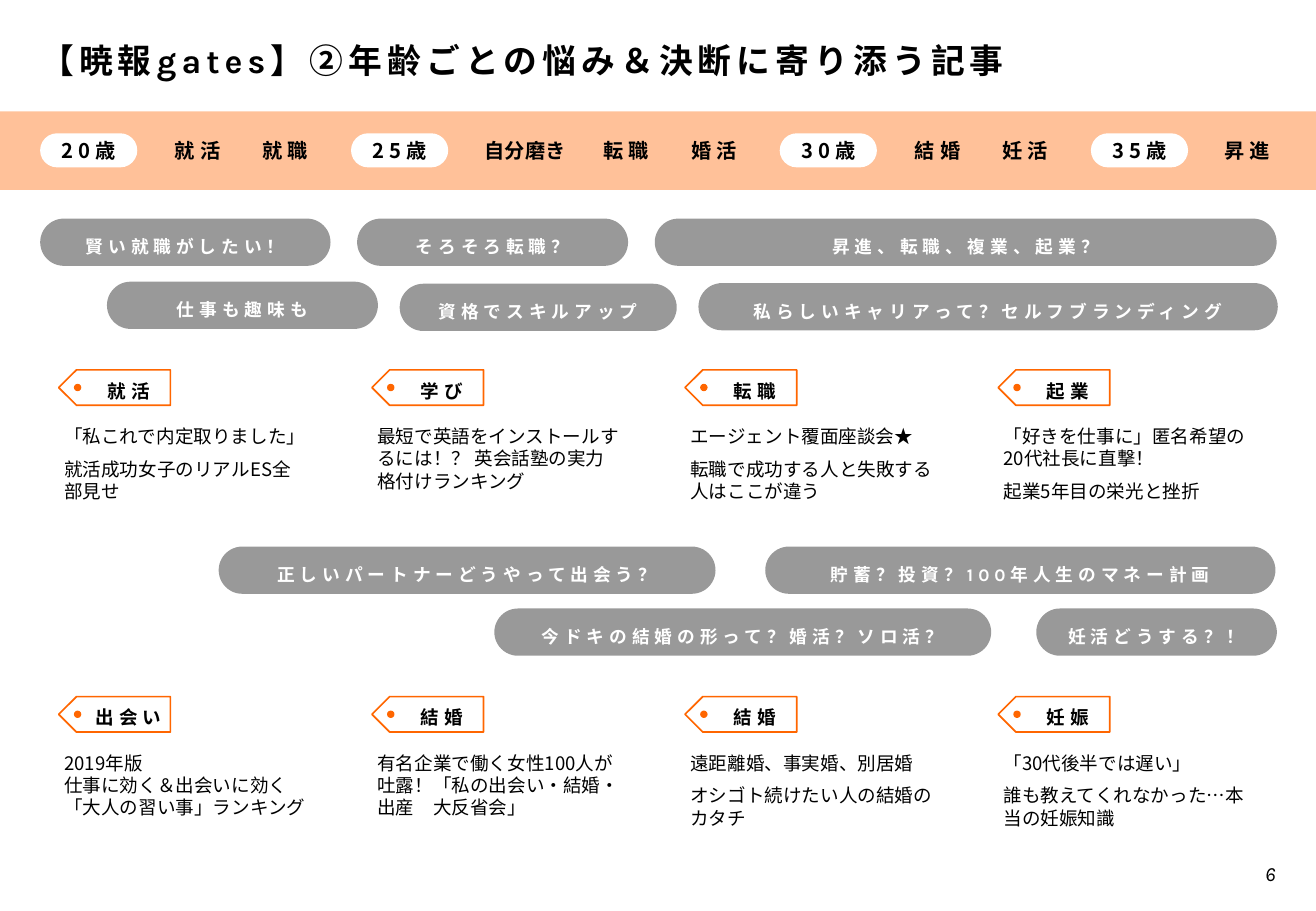
from copy import deepcopy
from dataclasses import dataclass, replace

from lxml import etree
from pptx import Presentation
from pptx.dml.color import RGBColor
from pptx.enum.shapes import MSO_SHAPE
from pptx.enum.text import MSO_ANCHOR, MSO_AUTO_SIZE, PP_ALIGN
from pptx.oxml.ns import qn
from pptx.shapes.autoshape import Shape
from pptx.slide import Slide
from pptx.util import Pt

RECTANGLE = MSO_SHAPE.RECTANGLE
ROUNDED = MSO_SHAPE.ROUNDED_RECTANGLE
PENTAGON = MSO_SHAPE.PENTAGON
OVAL = MSO_SHAPE.OVAL
TOP, MIDDLE, BOTTOM = MSO_ANCHOR.TOP, MSO_ANCHOR.MIDDLE, MSO_ANCHOR.BOTTOM
LEFT, CENTER, RIGHT = PP_ALIGN.LEFT, PP_ALIGN.CENTER, PP_ALIGN.RIGHT
FIXED, GROW = MSO_AUTO_SIZE.NONE, MSO_AUTO_SIZE.SHAPE_TO_FIT_TEXT

COLORS = {"black": "000000", "white": "FFFFFF", "orange": "FF6600"}
LATIN_FONT = "Karla"
JAPANESE_FONT = "Noto Sans CJK JP"


@dataclass(frozen=True)
class TextStyle:
    size: float
    font: str = LATIN_FONT
    color: str = "black"
    bold: bool = True
    italic: bool = False
    tracking: float = 3
    align: PP_ALIGN = LEFT
    anchor: MSO_ANCHOR = TOP
    line_spacing: float = 1
    space_after: float = 0
    margins: tuple[float, float, float, float] = (0, 0, 0, 0)
    wrap: bool = True
    auto_size: MSO_AUTO_SIZE = FIXED


@dataclass(frozen=True)
class Box:
    left: float
    top: float
    width: float
    height: float


@dataclass(frozen=True)
class Pill:
    text: str
    left: float
    top: float
    width: float


@dataclass(frozen=True)
class Card:
    tag: str
    body: tuple[str, ...]


TITLE_STYLE = TextStyle(20, anchor=MIDDLE, line_spacing=0.9)
NUMBER_STYLE = TextStyle(12, italic=True, bold=False, align=RIGHT, anchor=BOTTOM)
STAGE_STYLE = TextStyle(12, JAPANESE_FONT, wrap=False, auto_size=GROW)
AGE_STYLE = replace(STAGE_STYLE, align=CENTER, anchor=MIDDLE, margins=(8.5, 0, 8.5, 0))
PILL_STYLE = TextStyle(10.5, color="white", align=CENTER, line_spacing=1.5,
                       margins=(0, 0, 0, 2.8), auto_size=GROW)
TAG_STYLE = TextStyle(11, align=CENTER, anchor=MIDDLE, line_spacing=1.5,
                      margins=(11.3, 0, 0, 2.8))
BODY_STYLE = TextStyle(11, JAPANESE_FONT, bold=False, tracking=0, space_after=6,
                       margins=(14.2, 42.5, 14.2, 11.3))

AGES = {"20歳": 23.8, "25歳": 208.1, "30歳": 462.2, "35歳": 646.6}
STAGES = {"就活": 103.7, "就職": 155.5, "自分磨き": 287.3, "転職": 357.8, "婚活": 409.7,
          "結婚": 542.2, "妊活": 594, "昇進": 725.8}
PILLS = (
    Pill("賢い就職がしたい！", 23.8, 129.6, 172.1),
    Pill("そろそろ転職？", 211.7, 129.6, 160.6),
    Pill("昇進、転職、複業、起業？", 388.1, 129.6, 368.6),
    Pill("仕事も趣味も", 63.4, 167, 160.6),
    Pill("資格でスキルアップ", 236.9, 168.2, 164.2),
    Pill("私らしいキャリアって？セルフブランディング", 414, 167.8, 343.4),
    Pill("正しいパートナーどうやって出会う？", 129.6, 324, 294.5),
    Pill("貯蓄？投資？100年人生のマネー計画", 453.6, 324, 302.4),
    Pill("今ドキの結婚の形って？婚活？ソロ活？", 293, 360.7, 294.5),
    Pill("妊活どうする？！", 614.2, 360.7, 142.6),
)
CARD_ROWS = {
    209.5: (
        Card("就活", ("「私これで内定取りました」", "就活成功女子のリアルES全部見せ")),
        Card("学び", ("最短で英語をインストールするには！？ 英会話塾の実力格付けランキング",)),
        Card("転職", ("エージェント覆面座談会★", "転職で成功する人と失敗する人はここが違う")),
        Card("起業", ("「好きを仕事に」匿名希望の20代社長に直撃！", "起業5年目の栄光と挫折")),
    ),
    403.2: (
        Card("出会い", ("2019年版\v仕事に効く＆出会いに効く\v「大人の習い事」ランキング",)),
        Card("結婚", ("有名企業で働く女性100人が吐露！「私の出会い・結婚・出産　大反省会」",)),
        Card("結婚", ("遠距離婚、事実婚、別居婚", "オシゴト続けたい人の結婚のカタチ")),
        Card("妊娠", ("「30代後半では遅い」", "誰も教えてくれなかった…本当の妊娠知識")),
    ),
}
CARD_LEFT, CARD_PITCH = 23.8, 185.6


def color(name: str) -> RGBColor:
    return RGBColor.from_string(COLORS[name])


def write(shape: Shape, lines: tuple[str, ...], style: TextStyle) -> None:
    frame = shape.text_frame
    frame.text = lines[0]
    for line in lines[1:]:
        frame.add_paragraph().text = line
    frame.word_wrap = style.wrap
    frame.auto_size = style.auto_size
    frame.vertical_anchor = style.anchor
    (frame.margin_left, frame.margin_top,
     frame.margin_right, frame.margin_bottom) = map(Pt, style.margins)
    for paragraph in frame.paragraphs:
        paragraph.alignment = style.align
        paragraph.line_spacing = style.line_spacing
        paragraph.space_before = Pt(0)
        paragraph.space_after = Pt(style.space_after)
        for run in paragraph.runs:
            run.font.size = Pt(style.size)
            run.font.name = style.font
            run.font.bold = style.bold
            run.font.italic = style.italic
            run.font.color.rgb = color(style.color)
            properties = run._r.get_or_add_rPr()
            properties.set("spc", str(round(style.tracking * 100)))
            east_asian = etree.Element(qn("a:ea"), typeface=JAPANESE_FONT)
            properties.find(qn("a:latin")).addnext(east_asian)
        for line_break in paragraph._p.findall(qn("a:br")):
            line_break.append(deepcopy(paragraph.runs[0]._r.rPr))


def add_shape(slide: Slide, kind: MSO_SHAPE, box: Box, fill: str, opacity: int = 100) -> Shape:
    shape = slide.shapes.add_shape(kind, Pt(box.left), Pt(box.top), Pt(box.width), Pt(box.height))
    shape.shadow.inherit = False
    shape.fill.solid()
    shape.fill.fore_color.rgb = color(fill)
    shape.line.fill.background()
    if kind == ROUNDED:
        shape.adjustments[0] = 0.5
    if opacity < 100:
        fill_color = shape._element.spPr.find(qn("a:solidFill"))[0]
        etree.SubElement(fill_color, qn("a:alpha"), val=str(opacity * 1000))
    return shape


def add_text(slide: Slide, text: str, box: Box, style: TextStyle) -> None:
    shape = slide.shapes.add_textbox(Pt(box.left), Pt(box.top), Pt(box.width), Pt(box.height))
    write(shape, (text,), style)


def add_title(slide: Slide, text: str) -> None:
    title = slide.shapes.title
    title.left, title.top, title.width, title.height = Pt(23.8), Pt(20.9), Pt(733), Pt(32.4)
    write(title, (text,), TITLE_STYLE)


def add_card(slide: Slide, card: Card, left: float, top: float) -> None:
    panel = add_shape(slide, RECTANGLE, Box(left, top, 173.5, 100), "white")
    write(panel, card.body, BODY_STYLE)
    tag = add_shape(slide, PENTAGON, Box(left + 11, top + 9.7, 66.2, 21), "white")
    tag.rotation = 180
    tag._element.spPr.xfrm.set("flipV", "1")
    tag.line.color.rgb = color("orange")
    tag.line.width = Pt(1)
    write(tag, (card.tag,), TAG_STYLE)
    add_shape(slide, OVAL, Box(left + 20, top + 18, 4.4, 4.4), "orange")


def main() -> None:
    presentation = Presentation()
    presentation.slide_width, presentation.slide_height = Pt(780), Pt(540)
    slide = presentation.slides.add_slide(presentation.slide_layouts[5])
    add_title(slide, "【暁報gates】②年齢ごとの悩み＆決断に寄り添う記事")
    for top, cards in CARD_ROWS.items():
        for column, card in enumerate(cards):
            add_card(slide, card, CARD_LEFT + column * CARD_PITCH, top)
    add_shape(slide, RECTANGLE, Box(0, 66, 780, 46.6), "orange", 40)
    for age, left in AGES.items():
        write(add_shape(slide, ROUNDED, Box(left, 79, 57.6, 20.2), "white"), (age,), AGE_STYLE)
    for stage, left in STAGES.items():
        long_stage = len(stage) > 2
        style = replace(STAGE_STYLE, tracking=0 if long_stage else 3)
        add_text(slide, stage, Box(left, 82, 48 if long_stage else 30, 14.4), style)
    for pill in PILLS:
        shape = add_shape(slide, ROUNDED, Box(pill.left, pill.top, pill.width, 28), "black", 40)
        write(shape, (pill.text,), PILL_STYLE)
    add_text(slide, "6", Box(550.8, 499.7, 205.2, 25.2), NUMBER_STYLE)
    presentation.save("out.pptx")


if __name__ == "__main__":
    main()
